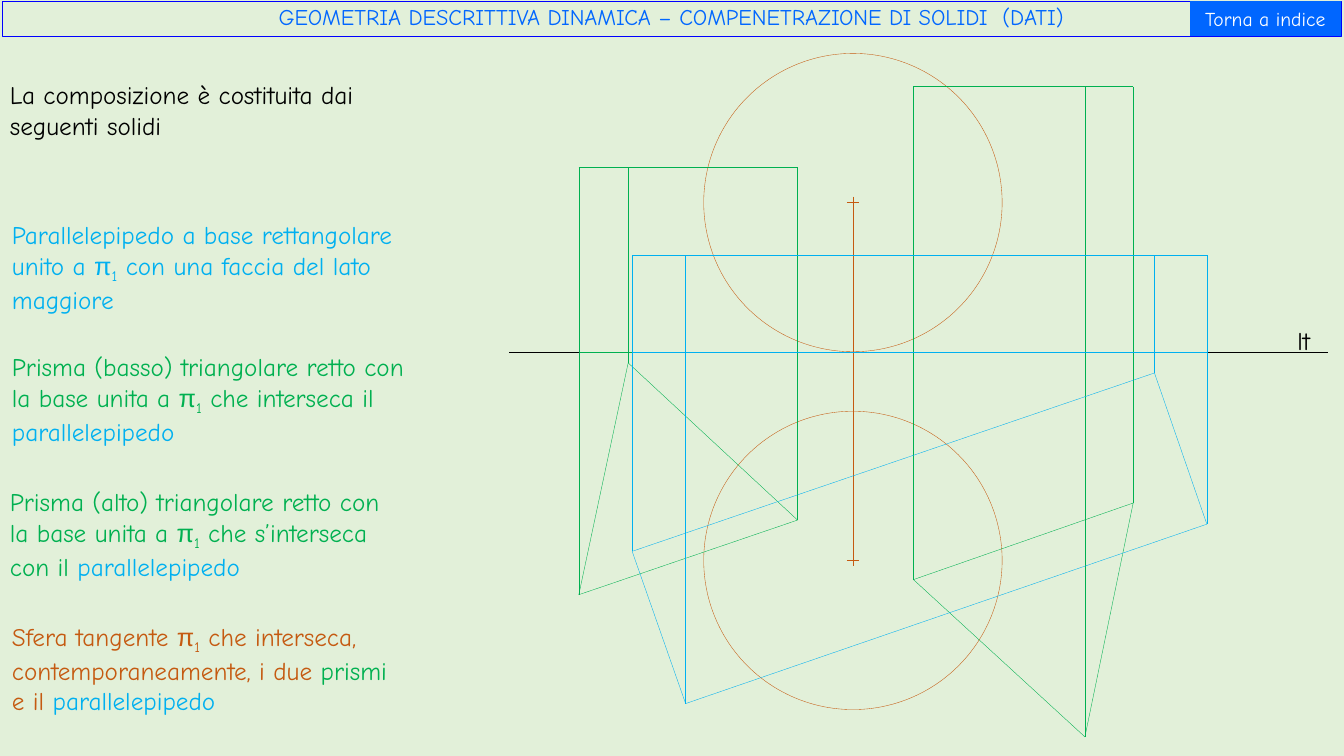
from math import atan2, degrees, dist

from lxml.etree import SubElement
from pptx import Presentation
from pptx.dml.color import RGBColor
from pptx.enum.shapes import MSO_CONNECTOR, MSO_SHAPE
from pptx.enum.text import MSO_ANCHOR, MSO_AUTO_SIZE, PP_ALIGN
from pptx.oxml.ns import qn
from pptx.util import Inches, Pt

W, H = 13.33, 7.5
FONT = "Comic Neue"
C = {"bg": "E2F0D9", "title": "0066FF", "frame": "0000FF", "white": "FFFFFF",
     "ink": "000000", "box": "00B0F0", "prism": "00B050", "sphere": "C55A11"}

# Left, top, width, height of each note, then its runs as (text, colour)
NOTES = [
    ((0, 0.74, 3.92, 0.71), [("La composizione è costituita dai seguenti solidi", "ink")]),
    ((0.02, 2.13, 4.32, 1.01), [
        ("Parallelepipedo a base rettangolare unito a π₁ con una faccia del lato maggiore", "box")]),
    ((0.02, 3.44, 4.1, 1.01), [
        ("Prisma (basso) triangolare retto con la base unita a π₁ che interseca il ", "prism"),
        ("parallelepipedo", "box")]),
    ((0, 4.78, 4.1, 1.01), [
        ("Prisma (alto) triangolare retto con la base unita a π₁ che s’interseca con il ", "prism"),
        ("parallelepipedo", "box")]),
    ((0.02, 6.11, 4.01, 1.01), [
        ("Sfera tangente π₁ che interseca, contemporaneamente, i due ", "sphere"),
        ("prismi", "prism"), (" e il ", "sphere"), ("parallelepipedo", "box")]),
]

# Base corners as (distance along the ground line, depth below it)
LOW_PRISM = [(2.91, 1.67), (1.23, 0.11), (0.74, 2.41)]
HIGH_PRISM = [(4.06, 2.26), (5.76, 3.82), (6.24, 1.5)]
BOX = [(1.27, 1.98), (6.45, 0.21), (6.97, 1.71), (1.8, 3.49)]


def rgb(name):
    return RGBColor.from_string(C[name])


def add_run(p, text, color, size, font=FONT):
    r = p.add_run()
    r.text = text
    for key, value in {"name": font, "size": Pt(size)}.items():
        setattr(r.font, key, value)
    r.font.color.rgb = rgb(color)
    return r


def add_rich_text(p, text, color, size):
    """Write text, setting each π₁ as an Arial π with a subscript 1."""
    for i, part in enumerate(text.split("π₁")):
        if i:
            add_run(p, "π", color, size, "Arial")
            add_run(p, "1", color, size).font._element.set("baseline", "-25000")
        add_run(p, part, color, size)


def add_note(s, box, runs, size=18):
    tf = s.shapes.add_textbox(*map(Inches, box)).text_frame
    tf.word_wrap = True
    for text, color in runs:
        add_rich_text(tf.paragraphs[0], text, color, size)


def add_outline(s, kind, box, color):
    sp = s.shapes.add_shape(kind, *map(Inches, box))
    sp.shadow.inherit = False
    sp.fill.background()
    sp.line.color.rgb = rgb(color)
    sp.line.width = Pt(0.25)
    return sp


def add_header(s, box):
    x, y, w, h = box
    button_w = 1.5
    title = s.shapes.title
    button = s.shapes.add_shape(MSO_SHAPE.ACTION_BUTTON_CUSTOM,
                                *map(Inches, (x + w - button_w, y, button_w, h)))
    button.shadow.inherit = False
    button.fill.solid()
    button.fill.fore_color.rgb = rgb("title")
    button.line.fill.background()
    for key, value in zip(("left", "top", "width", "height"), box):
        setattr(title, key, Inches(value))
    title.line.color.rgb = rgb("frame")
    title.line.width = Pt(0.25)
    labels = [
        (title, "GEOMETRIA DESCRITTIVA DINAMICA – COMPENETRAZIONE DI SOLIDI  (DATI)", "title", 16, 0.9),
        (button, "Torna a indice", "white", 14, 1.0)]
    for sp, text, color, size, spacing in labels:
        tf = sp.text_frame
        for key, value in {"vertical_anchor": MSO_ANCHOR.MIDDLE, "word_wrap": True,
                           "auto_size": MSO_AUTO_SIZE.NONE}.items():
            setattr(tf, key, value)
        p = tf.paragraphs[0]
        p.alignment, p.line_spacing = PP_ALIGN.CENTER, spacing
        add_run(p, text, color, size)


class Projection:
    """Draws solids from above and in front, about a ground line starting at x, y."""

    def __init__(self, s, x, y):
        self.s, self.x, self.y = s, x, y

    def line(self, start, end, color):
        ends = [Inches(o + v) for pt in (start, end) for o, v in zip((self.x, self.y), pt)]
        ln = self.s.shapes.add_connector(MSO_CONNECTOR.STRAIGHT, *ends)
        ln.line.color.rgb = rgb(color)
        ln.line.width = Pt(0.25)
        SubElement(ln._element.spPr, qn("a:effectLst"))

    def centred(self, kind, centre, w, h, color):
        cx, cy = centre
        box = (self.x + cx - w / 2, self.y + cy - h / 2, w, h)
        return add_outline(self.s, kind, box, color)

    def front(self, base, height, color):
        """Draw the top edge and a vertical down to every base corner."""
        xs = [x for x, _ in base]
        self.line((min(xs), -height), (max(xs), -height), color)
        for x, depth in base:
            self.line((x, -height), (x, depth), color)

    def prism(self, base, height):
        apex, a, b = base
        mid = [(u + v) / 2 for u, v in zip(a, b)]
        centre = [(u + v) / 2 for u, v in zip(apex, mid)]
        sp = self.centred(MSO_SHAPE.ISOSCELES_TRIANGLE, centre, dist(a, b), dist(apex, mid), "prism")
        sp.rotation = degrees(atan2(apex[0] - mid[0], mid[1] - apex[1])) % 360
        self.front(base, height, "prism")

    def parallelepiped(self, base, height):
        for start, end in zip(base, base[1:] + base[:1]):
            self.line(start, end, "box")
        self.front(base, height, "box")

    def sphere(self, x, depth, radius, tick=0.06):
        for y in (-radius, depth):
            self.centred(MSO_SHAPE.OVAL, (x, y), 2 * radius, 2 * radius, "sphere")
            self.line((x, y - tick), (x, y + tick), "sphere")
            self.line((x - tick, y), (x + tick, y), "sphere")
        self.line((x, -radius), (x, depth), "sphere")

    def ground(self, start, end, color):
        self.line((start, 0), (end, 0), color)


def add_drawing(s, x, y):
    view = Projection(s, x, y)
    view.ground(0.05, 8.17, "ink")
    view.sphere(3.46, 2.07, 1.48)
    view.prism(LOW_PRISM, 1.83)
    view.prism(HIGH_PRISM, 2.63)
    view.parallelepiped(BOX, 0.96)
    view.ground(BOX[0][0], BOX[2][0], "box")
    view.ground(LOW_PRISM[2][0], BOX[0][0], "prism")
    add_note(s, (x + 7.77, y - 0.31, 0.5, 0.4), [("lt", "ink")])


def main():
    prs = Presentation()
    prs.slide_width, prs.slide_height = Inches(W), Inches(H)
    s = prs.slides.add_slide(prs.slide_layouts[5])
    s.background.fill.solid()
    s.background.fill.fore_color.rgb = rgb("bg")
    add_header(s, (0.02, 0.01, W - 0.05, 0.35))
    for box, runs in NOTES:
        add_note(s, box, runs)
    add_drawing(s, 5, 3.49)
    prs.save("out.pptx")


if __name__ == "__main__":
    main()
